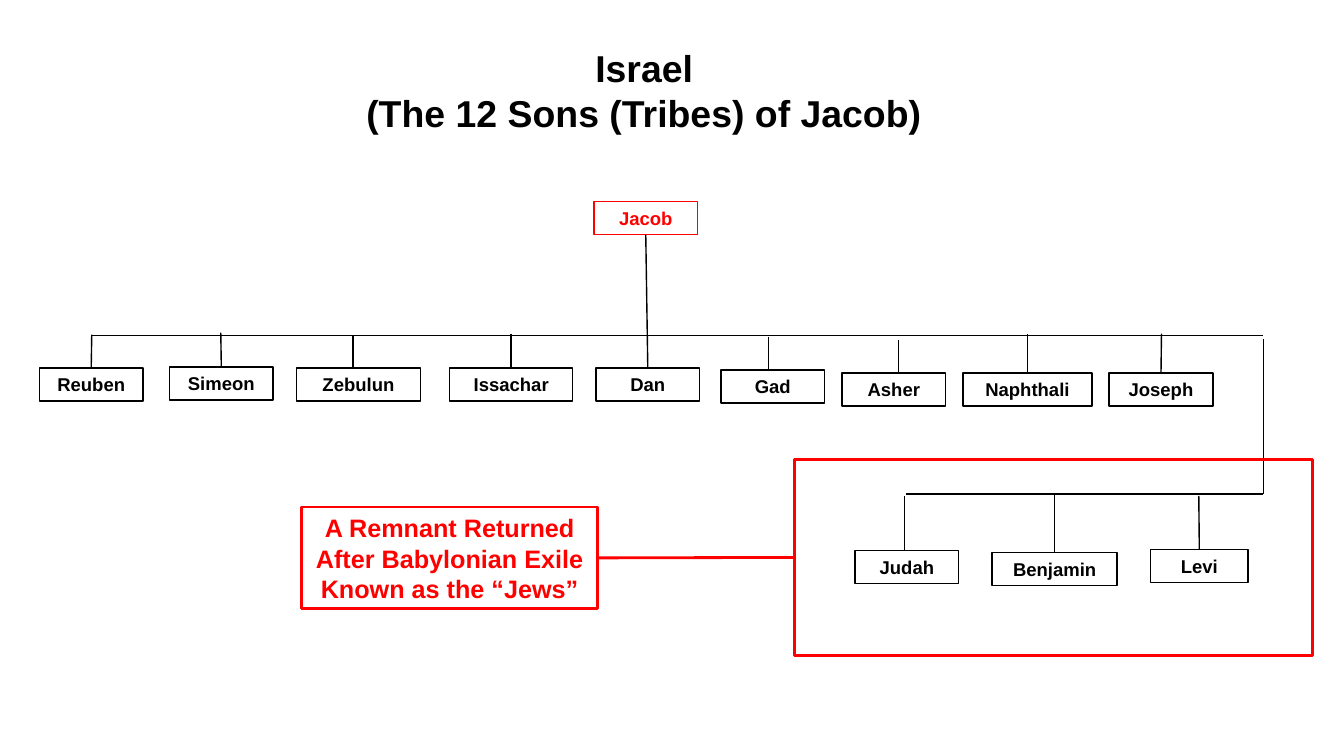
from pptx import Presentation
from pptx.dml.color import RGBColor
from pptx.enum.shapes import MSO_CONNECTOR as Link, MSO_SHAPE as Shape
from pptx.enum.text import MSO_ANCHOR as Anchor, MSO_AUTO_SIZE as Fit, PP_ALIGN as Align
from pptx.oxml.ns import qn
from pptx.util import Inches, Pt
from lxml import etree

BLACK, RED, WHITE = "000000", "FF0000", "FFFFFF"
HIGH = 0.33
INSET = {"margin_left": Inches(0.13), "margin_right": Inches(0.13),
         "margin_top": Inches(0.07), "margin_bottom": Inches(0.07)}

# name, left, top, width, stem x, stem top
SONS = [
    ("Reuben", 0.39, 3.65, 1.03, 0.91, 3.32),
    ("Simeon", 1.68, 3.64, 1.03, 2.19, 3.3),
    ("Zebulun", 2.94, 3.65, 1.23, 3.5, 3.33),
    ("Issachar", 4.46, 3.65, 1.22, 5.07, 3.31),
    ("Dan", 5.91, 3.65, 1.03, 6.41, 2.33),
    ("Gad", 7.15, 3.67, 1.03, 7.62, 3.34),
    ("Asher", 8.35, 3.7, 1.03, 8.91, 3.37),
    ("Naphthali", 9.55, 3.7, 1.28, 10.19, 3.31),
    ("Joseph", 11, 3.7, 1.03, 11.52, 3.31),
    ("Judah", 8.48, 5.46, 1.03, 8.97, 4.92),
    ("Benjamin", 9.84, 5.48, 1.24, 10.46, 4.9),
    ("Levi", 11.41, 5.45, 0.97, 11.89, 4.92),
]
RAILS = [(0.91, 3.33, 12.53, 3.33), (12.53, 4.9, 12.53, 3.36), (8.99, 4.9, 12.53, 4.9)]


def paint(color):
    return RGBColor.from_string(color)


def assign(item, values):
    for name, value in values.items():
        setattr(item, name, value)


def write(frame, lines, size, color, **extra):
    assign(frame, {"word_wrap": True, "auto_size": Fit.NONE,
                   "vertical_anchor": Anchor.MIDDLE, **extra})
    for i, line in enumerate(lines):
        para = frame.add_paragraph() if i else frame.paragraphs[0]
        para.alignment = Align.CENTER
        run = para.add_run()
        run.text = line
        assign(run.font, {"name": "Arial", "size": Pt(size), "bold": True})
        run.font.color.rgb = paint(color)


def add_box(slide, left, top, width, high, color, weight=1, fill=None):
    box = slide.shapes.add_shape(Shape.RECTANGLE, *map(Inches, (left, top, width, high)))
    box.shadow.inherit = False
    if fill:
        box.fill.solid()
        box.fill.fore_color.rgb = paint(fill)
    else:
        box.fill.background()
    box.line.color.rgb = paint(color)
    box.line.width = Pt(weight)
    return box


def add_line(slide, ends, color=BLACK, weight=1):
    line = slide.shapes.add_connector(Link.STRAIGHT, *map(Inches, ends))
    line.line.color.rgb = paint(color)
    line.line.width = Pt(weight)
    etree.SubElement(line._element.spPr, qn("a:effectLst"))
    return line


def add_title(slide):
    title = slide.shapes.title
    assign(title, {"left": Inches(3.28), "top": Inches(0.3),
                   "width": Inches(6.22), "height": Inches(1.19)})
    write(title.text_frame, ["Israel", "(The 12 Sons (Tribes) of Jacob)"],
          26.7, BLACK, **INSET)


def add_son(slide, name, left, top, width, stem, start):
    """Draw a son's box and its stem, joined where the stem meets the middle."""
    box = add_box(slide, left, top, width, HIGH, BLACK)
    write(box.text_frame, [name], 13.2, BLACK, **INSET)
    line = add_line(slide, (stem, start, stem, top))
    if abs(left + width / 2 - stem) < 0.02:
        line.end_connect(box, 0)
    return line


def add_note(slide):
    frame = add_box(slide, 7.88, 4.56, 5.14, 1.94, RED, 2)
    note = add_box(slide, 2.99, 5.03, 2.94, 1.01, RED, 2)
    write(note.text_frame,
          ["A Remnant Returned After Babylonian Exile", "Known as the “Jews”"],
          18, RED, auto_size=Fit.SHAPE_TO_FIT_TEXT)
    line = add_line(slide, (7.88, 5.53, 5.93, 5.53), RED, 2)
    line.begin_connect(frame, 1)
    line.end_connect(note, 3)


def main():
    deck = Presentation()
    assign(deck, {"slide_width": Inches(13.33), "slide_height": Inches(7.5)})
    slide = deck.slides.add_slide(deck.slide_layouts[5])
    add_title(slide)
    jacob = add_box(slide, 5.89, 2, 1.03, HIGH, RED, fill=WHITE)
    write(jacob.text_frame, ["Jacob"], 13.2, RED, **INSET)
    for ends in RAILS:
        add_line(slide, ends)
    stems = {son[0]: add_son(slide, *son) for son in SONS}
    dan = stems["Dan"]
    dan.begin_connect(jacob, 2)
    add_note(slide)
    deck.save("out.pptx")


if __name__ == "__main__":
    main()
